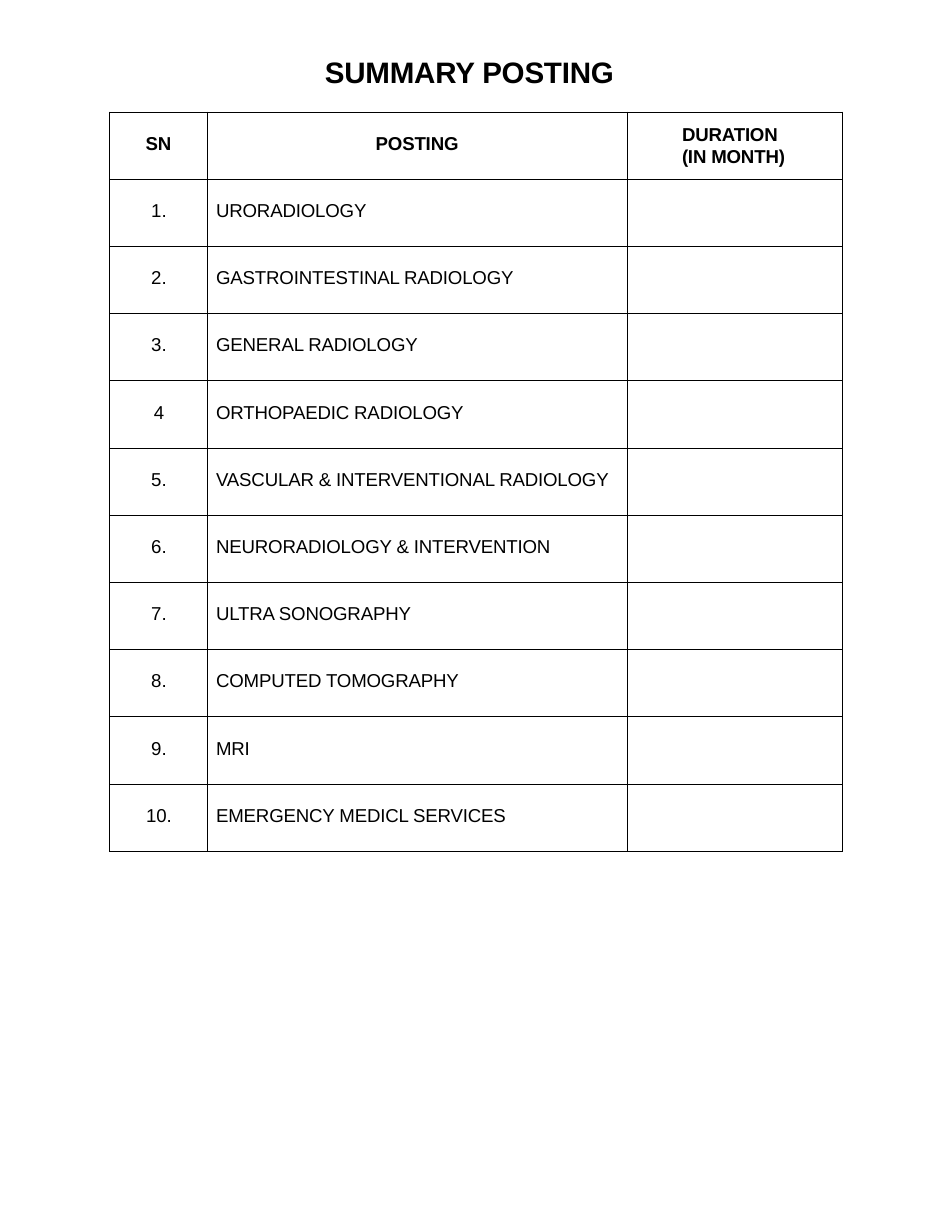
"""Build the one-page summary of radiology postings."""
from pptx import Presentation
from pptx.dml.color import RGBColor
from pptx.enum import text
from pptx.oxml import parse_xml
from pptx.oxml.ns import nsdecls
from pptx.util import Inches, Pt

TITLE = "SUMMARY POSTING"
HEADINGS = ["SN", "POSTING", ["DURATION", "(IN MONTH)"]]
POSTINGS = [
    ("1.", "URORADIOLOGY"),
    ("2.", "GASTROINTESTINAL RADIOLOGY"),
    ("3.", "GENERAL RADIOLOGY"),
    ("4", "ORTHOPAEDIC RADIOLOGY"),
    ("5.", "VASCULAR & INTERVENTIONAL RADIOLOGY"),
    ("6.", "NEURORADIOLOGY & INTERVENTION"),
    ("7.", "ULTRA SONOGRAPHY"),
    ("8.", "COMPUTED TOMOGRAPHY"),
    ("9.", "MRI"),
    ("10.", "EMERGENCY MEDICL SERVICES"),
]
THEME = {"font": "Arial", "ink": "000000", "title": 19, "body": 12,
         "tracking": -10, "rule": 0.5}
COLUMNS = [0.87, 3.75, 1.92]
ROW_HEIGHT = 0.6
CENTER, LEFT = text.PP_ALIGN.CENTER, text.PP_ALIGN.LEFT


def write(paragraph, words, size, bold=False, tracking=THEME["tracking"]):
    run = paragraph.add_run()
    run.text = words
    run.font.name = THEME["font"]
    run.font.size = Pt(size)
    run.font.bold = bold
    run.font.color.rgb = RGBColor.from_string(THEME["ink"])
    run._r.get_or_add_rPr().set("spc", str(tracking))


def rule_cell(cell):
    properties = cell._tc.get_or_add_tcPr()
    for side in ("lnL", "lnR", "lnT", "lnB"):
        properties.append(parse_xml(
            f'<a:{side} {nsdecls("a")} w="{Pt(THEME["rule"])}"><a:solidFill>'
            f'<a:srgbClr val="{THEME["ink"]}"/></a:solidFill></a:{side}>'))
    cell.fill.background()


def fill_cell(cell, lines, align, left=0, top=0.19, bold=False, tracking=THEME["tracking"]):
    cell.margin_left, cell.margin_top = Inches(left), Inches(top)
    cell.margin_right = cell.margin_bottom = 0
    paragraph = cell.text_frame.paragraphs[0]
    paragraph.alignment = align
    for index, line in enumerate(lines):
        if index:
            paragraph.add_line_break()
            paragraph.line_spacing = Pt(13.8)
        write(paragraph, line, THEME["body"], bold, tracking)


def add_title(slide):
    title = slide.shapes.add_textbox(Inches(2.89), Inches(0.47), Inches(2.65), Inches(0.34))
    frame = title.text_frame
    frame.word_wrap = True
    frame.margin_left = Inches(0.01)
    frame.margin_top = Inches(0.01)
    frame.margin_right = frame.margin_bottom = 0
    write(frame.paragraphs[0], TITLE, THEME["title"], bold=True)


def add_postings(slide):
    row_count = len(POSTINGS) + 1
    table = slide.shapes.add_table(
        row_count, len(COLUMNS), Inches(0.98), Inches(1),
        Inches(sum(COLUMNS)), Inches(ROW_HEIGHT * row_count)).table
    table.first_row = table.horz_banding = False
    for column, width in zip(table.columns, COLUMNS):
        column.width = Inches(width)
    for row in table.rows:
        row.height = Inches(ROW_HEIGHT)
    for cell in table.iter_cells():
        rule_cell(cell)

    number, posting, duration = HEADINGS
    fill_cell(table.cell(0, 0), [number], CENTER, bold=True)
    fill_cell(table.cell(0, 1), [posting], CENTER, bold=True)
    fill_cell(table.cell(0, 2), duration, LEFT, left=0.49, top=0.11, bold=True)
    for row, (number, posting) in enumerate(POSTINGS, start=1):
        fill_cell(table.cell(row, 0), [number], CENTER, left=0.01, tracking=0)
        fill_cell(table.cell(row, 1), [posting], LEFT, left=0.08)


def main():
    deck = Presentation()
    deck.slide_width, deck.slide_height = Inches(8.5), Inches(11)
    slide = deck.slides.add_slide(deck.slide_layouts[6])
    add_title(slide)
    add_postings(slide)
    deck.save("out.pptx")


if __name__ == "__main__":
    main()
